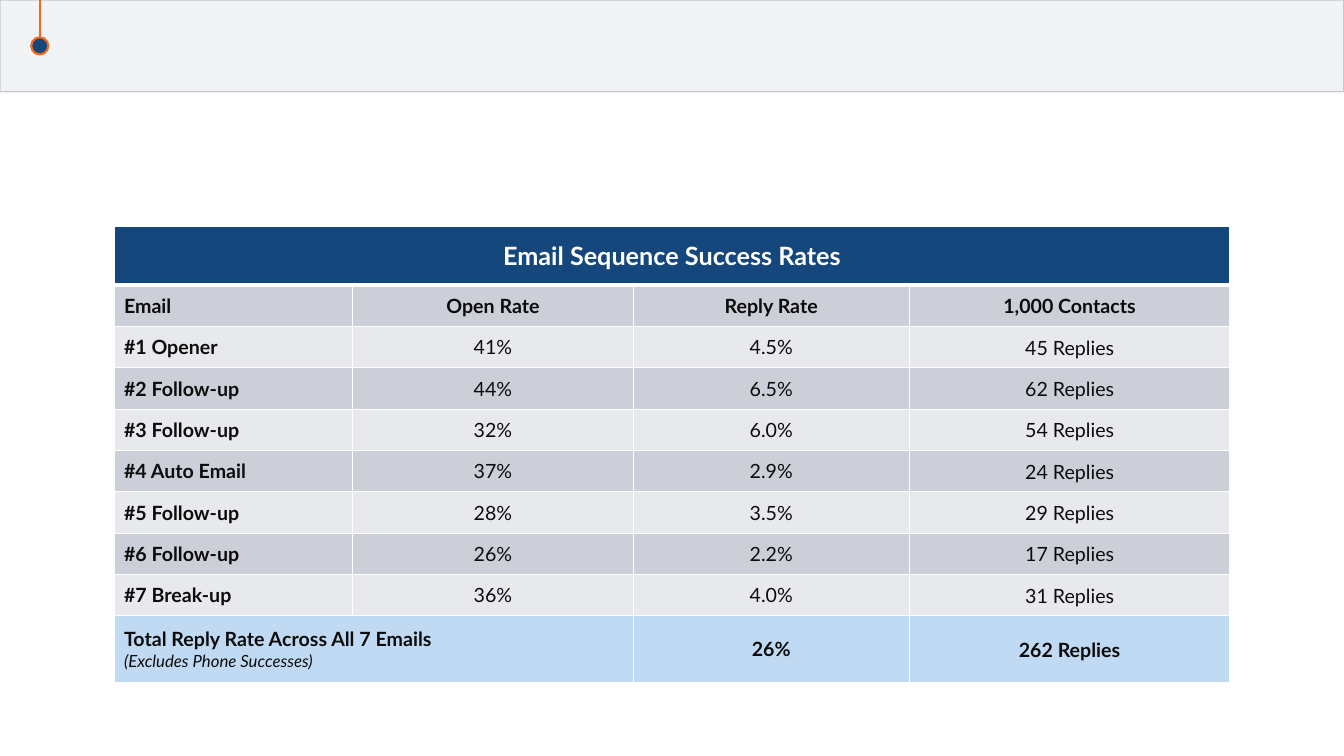
from lxml import etree
from pptx import Presentation
from pptx import util as u
from pptx.dml.color import RGBColor
from pptx.enum import shapes, text
from pptx.oxml import ns

PX = 9144
FONT = "Lato"
COLORS = {
    "white": "FFFFFF", "navy": "17467C", "header": "16477C", "orange": "F26922",
    "band": "091E35", "ink": "0C0C0C", "dark": "CCCFD7", "light": "E8E9EC",
    "total": "C1DAF4",
}
COLS = [237, 278, 274, 318]
ROWS = [58] + [41] * 8 + [66]
HEADINGS = ["Email", "Open Rate", "Reply Rate", "1,000 Contacts"]
EMAILS = [
    ["#1 Opener", "41%", "4.5%", "45 Replies"],
    ["#2 Follow-up", "44%", "6.5%", "62 Replies"],
    ["#3 Follow-up", "32%", "6.0%", "54 Replies"],
    ["#4 Auto Email", "37%", "2.9%", "24 Replies"],
    ["#5 Follow-up", "28%", "3.5%", "29 Replies"],
    ["#6 Follow-up", "26%", "2.2%", "17 Replies"],
    ["#7 Break-up", "36%", "4.0%", "31 Replies"],
]


def px(n):
    return u.Emu(n * PX)


def rgb(name):
    return RGBColor.from_string(COLORS[name])


def set_alpha(fill, percent):
    clr = fill._xPr.find(ns.qn("a:solidFill"))[0]
    etree.SubElement(clr, ns.qn("a:alpha")).set("val", str(percent * 1000))


def add_box(s, kind, x, y, w, h, fill, line, weight):
    sp = s.shapes.add_shape(kind, px(x), px(y), px(w), px(h))
    sp.shadow.inherit = False
    sp.fill.solid()
    sp.fill.fore_color.rgb = rgb(fill)
    sp.line.color.rgb = rgb(line)
    sp.line.width = u.Pt(weight)
    return sp


def add_line(s, x1, y1, x2, y2, color, weight):
    ln = s.shapes.add_connector(shapes.MSO_CONNECTOR.STRAIGHT, px(x1), px(y1), px(x2), px(y2))
    ln.line.color.rgb = rgb(color)
    ln.line.width = u.Pt(weight)
    etree.SubElement(ln._element.spPr, ns.qn("a:effectLst"))


def add_run(p, words, size=14, color="ink", bold=False, italic=False):
    r = p.add_run()
    r.text = words
    f = r.font
    f.name, f.size, f.bold, f.italic = FONT, u.Pt(size), bold, italic
    f.color.rgb = rgb(color)


def set_borders(cell, top=1, bottom=1):
    tcPr = cell._tc.get_or_add_tcPr()
    sides = [("lnL", 1), ("lnR", 1), ("lnT", top), ("lnB", bottom)]
    for i, (side, weight) in enumerate(sides):
        ln = etree.Element(ns.qn("a:" + side), w=str(u.Pt(weight)))
        fill = etree.SubElement(ln, ns.qn("a:solidFill"))
        etree.SubElement(fill, ns.qn("a:srgbClr"), val=COLORS["white"])
        tcPr.insert(i, ln)


def style_cell(cell, row, col, fill):
    cell.fill.solid()
    cell.fill.fore_color.rgb = rgb(fill)
    cell.vertical_anchor = text.MSO_ANCHOR.MIDDLE
    if col == 3 and row > 1:
        cell.margin_left = cell.margin_right = cell.margin_top = px(1)
        cell.margin_bottom = 0
    set_borders(cell, 3 if row == 1 else 1, 3 if row == 0 else 1)


def write_cell(cell, words, centred=True, **style):
    p = cell.text_frame.paragraphs[0]
    p.alignment = text.PP_ALIGN.CENTER if centred else text.PP_ALIGN.LEFT
    add_run(p, words, **style)


def add_rates_table(s, x, y):
    frame = s.shapes.add_table(len(ROWS), len(COLS), px(x), px(y), px(sum(COLS)), px(sum(ROWS)))
    tbl = frame.table
    for column, w in zip(tbl.columns, COLS):
        column.width = px(w)
    for row, h in zip(tbl.rows, ROWS):
        row.height = px(h)
    last = len(ROWS) - 1
    fills = ["header"] + ["dark", "light"] * 4 + ["total"]
    for i, fill in enumerate(fills):
        for j in range(len(COLS)):
            style_cell(tbl.cell(i, j), i, j, fill)
    tbl.cell(0, 0).merge(tbl.cell(0, 3))
    tbl.cell(last, 0).merge(tbl.cell(last, 1))

    write_cell(tbl.cell(0, 0), "Email Sequence Success Rates", size=18, color="white", bold=True)
    for i, values in enumerate([HEADINGS] + EMAILS, 1):
        for j, words in enumerate(values):
            write_cell(tbl.cell(i, j), words, centred=j > 0, bold=i == 1 or j == 0)

    total = tbl.cell(last, 0)
    write_cell(total, "Total Reply Rate Across All 7 Emails", centred=False, bold=True)
    add_run(total.text_frame.add_paragraph(), "(Excludes Phone Successes)", size=12, italic=True)
    write_cell(tbl.cell(last, 2), "26%", bold=True)
    write_cell(tbl.cell(last, 3), "262 Replies", bold=True)


def main():
    prs = Presentation()
    prs.slide_width, prs.slide_height = px(1333), px(750)
    s = prs.slides.add_slide(prs.slide_layouts[6])
    band = add_box(s, shapes.MSO_SHAPE.RECTANGLE, 0, 0, 1333, 91, "band", "band", 1)
    set_alpha(band.fill, 5)
    set_alpha(band.line.fill, 20)
    add_line(s, 40, 0, 40, 43, "orange", 1.5)
    add_box(s, shapes.MSO_SHAPE.OVAL, 31, 37, 17, 17, "navy", "orange", 1.5)
    add_rates_table(s, 113, 225)
    prs.save("out.pptx")


if __name__ == "__main__":
    main()
